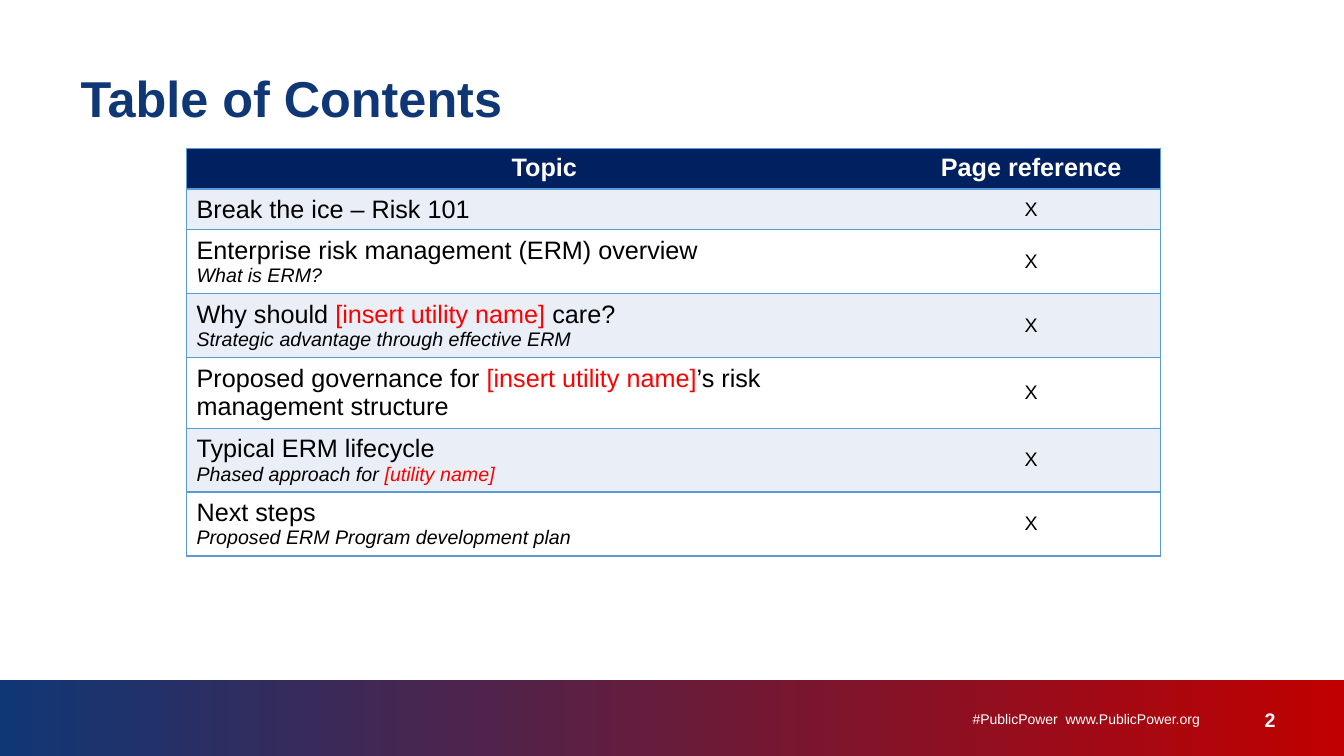
from lxml import etree
from pptx import Presentation
from pptx.dml.color import RGBColor
from pptx.enum.shapes import MSO_SHAPE
from pptx.enum.text import MSO_ANCHOR, PP_ALIGN
from pptx.oxml.ns import qn
from pptx.util import Inches, Pt

RECT = MSO_SHAPE.RECTANGLE
LEFT, MID, RIGHT = PP_ALIGN.LEFT, PP_ALIGN.CENTER, PP_ALIGN.RIGHT
TOP, CENTER = MSO_ANCHOR.TOP, MSO_ANCHOR.MIDDLE

WIDE, HIGH = Inches(13.333), Inches(7.5)
FONT = "Arial"
HUES = {
    "blue": "103775", "navy": "002060", "crimson": "C00000", "red": "FF0000",
    "line": "5B9BD5", "tint": "EAEFF7", "white": "FFFFFF", "black": "000000",
}

# Topic, subtitle and row height in percent of the slide
TOPICS = [
    ("Break the ice – Risk 101", "", 5.4),
    ("Enterprise risk management (ERM) overview", "What is ERM?", 8),
    ("Why should [insert utility name] care?",
     "Strategic advantage through effective ERM", 8),
    ("Proposed governance for [insert utility name]’s risk management structure",
     "", 8.9),
    ("Typical ERM lifecycle", "Phased approach for [utility name]", 8),
    ("Next steps", "Proposed ERM Program development plan", 8),
]


def hue(name):
    return RGBColor.from_string(HUES[name])


def across(pct):
    return round(WIDE * pct / 100)


def down(pct):
    return round(HIGH * pct / 100)


def area(left, top, width, height):
    return across(left), down(top), across(width), down(height)


def style(para, size, color, align=LEFT, bold=False, slant=False):
    para.alignment = align
    font = para.font
    font.name, font.size = FONT, Pt(size)
    font.bold, font.italic = bold, slant
    font.color.rgb = hue(color)


def label(slide, text, box, size, color, align=LEFT, bold=False):
    frame = slide.shapes.add_textbox(*area(*box)).text_frame
    frame.word_wrap = True
    frame.vertical_anchor = TOP
    frame.margin_left = frame.margin_right = 0
    frame.margin_top = frame.margin_bottom = 0
    para = frame.paragraphs[0]
    para.text = text
    style(para, size, color, align, bold)
    return para


def band(slide):
    shape = slide.shapes.add_shape(RECT, *area(0, 90, 100, 10))
    shape.shadow.inherit = False
    shape.line.fill.background()
    shape.fill.gradient()
    shape.fill.gradient_angle = 180
    for stop, name in zip(shape.fill.gradient_stops, ("crimson", "blue")):
        stop.color.rgb = hue(name)


def edge(cell, sides):
    props = cell._tc.get_or_add_tcPr()
    for side in "LRTB":
        line = etree.SubElement(props, qn("a:ln" + side), w=str(Pt(1)))
        if side in sides:
            fill = etree.SubElement(line, qn("a:solidFill"))
            etree.SubElement(fill, qn("a:srgbClr"), val=HUES["line"])
        else:
            etree.SubElement(line, qn("a:noFill"))


def paint(cell, sides, fill, anchor=CENTER):
    edge(cell, sides)
    cell.fill.solid()
    cell.fill.fore_color.rgb = hue(fill)
    cell.vertical_anchor = anchor


def write(para, text):
    """Add the text with every [blank to fill in] in red."""
    for part in text.replace("[", "|[").replace("]", "]|").split("|"):
        if part:
            run = para.add_run()
            run.text = part
            if part.startswith("["):
                run.font.color.rgb = hue("red")


def topics(slide):
    rows = [5.4] + [height for _, _, height in TOPICS]
    cols = [53.25, 19.2]
    box = area(13.88, 19.6, sum(cols), sum(rows))
    table = slide.shapes.add_table(len(rows), len(cols), *box).table
    for col, width in zip(table.columns, cols):
        col.width = across(width)
    for row, height in zip(table.rows, rows):
        row.height = down(height)

    # Header
    for i, (text, sides) in enumerate((("Topic", "LTB"), ("Page reference", "RTB"))):
        cell = table.cell(0, i)
        paint(cell, sides, "navy", TOP)
        cell.text = text
        style(cell.text_frame.paragraphs[0], 18, "white", MID, bold=True)

    # Body
    for i, (topic, note, _) in enumerate(TOPICS, 1):
        fill = "tint" if i % 2 else "white"
        name, page = table.cell(i, 0), table.cell(i, 1)
        paint(name, "LTB", fill)
        paint(page, "RTB", fill)
        head = name.text_frame.paragraphs[0]
        write(head, topic)
        style(head, 18, "black")
        if note:
            para = name.text_frame.add_paragraph()
            write(para, note)
            style(para, 14, "black", slant=True)
        page.text = "X"
        style(page.text_frame.paragraphs[0], 14, "black", MID)


def main():
    deck = Presentation()
    deck.slide_width, deck.slide_height = WIDE, HIGH
    slide = deck.slides.add_slide(deck.slide_layouts[6])

    # Footer
    band(slide)
    label(slide, "#PublicPower  www.PublicPower.org", (68.78, 94, 20.48, 4),
          10, "white", RIGHT)
    label(slide, "2", (90.9, 93.6, 4, 4.4), 14, "white", RIGHT, bold=True)

    # Title and contents
    title = label(slide, "Table of Contents", (6, 9.87, 88.2, 9.73),
                  36, "blue", bold=True)
    title.line_spacing = Pt(38)
    topics(slide)
    deck.save("out.pptx")


if __name__ == "__main__":
    main()
